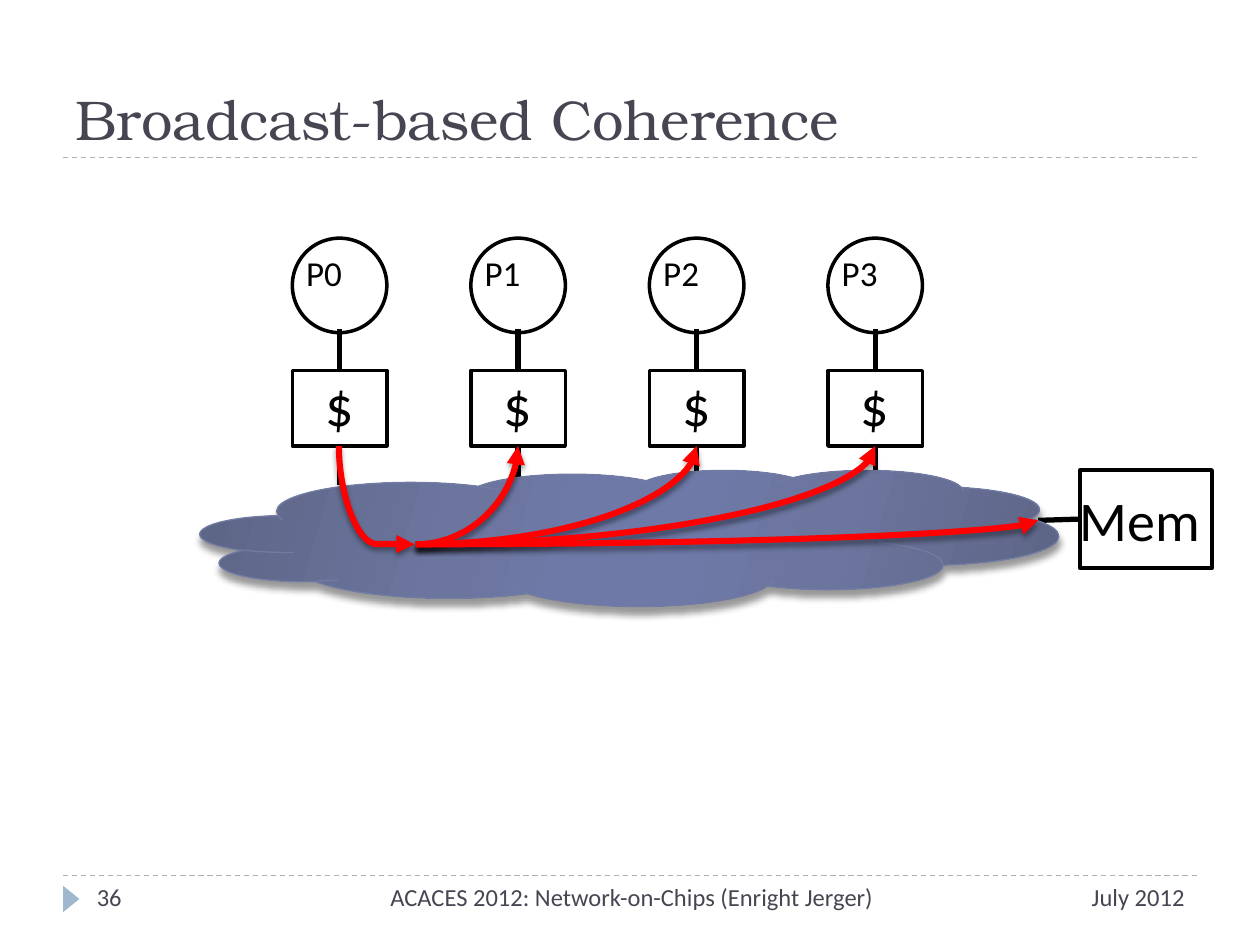
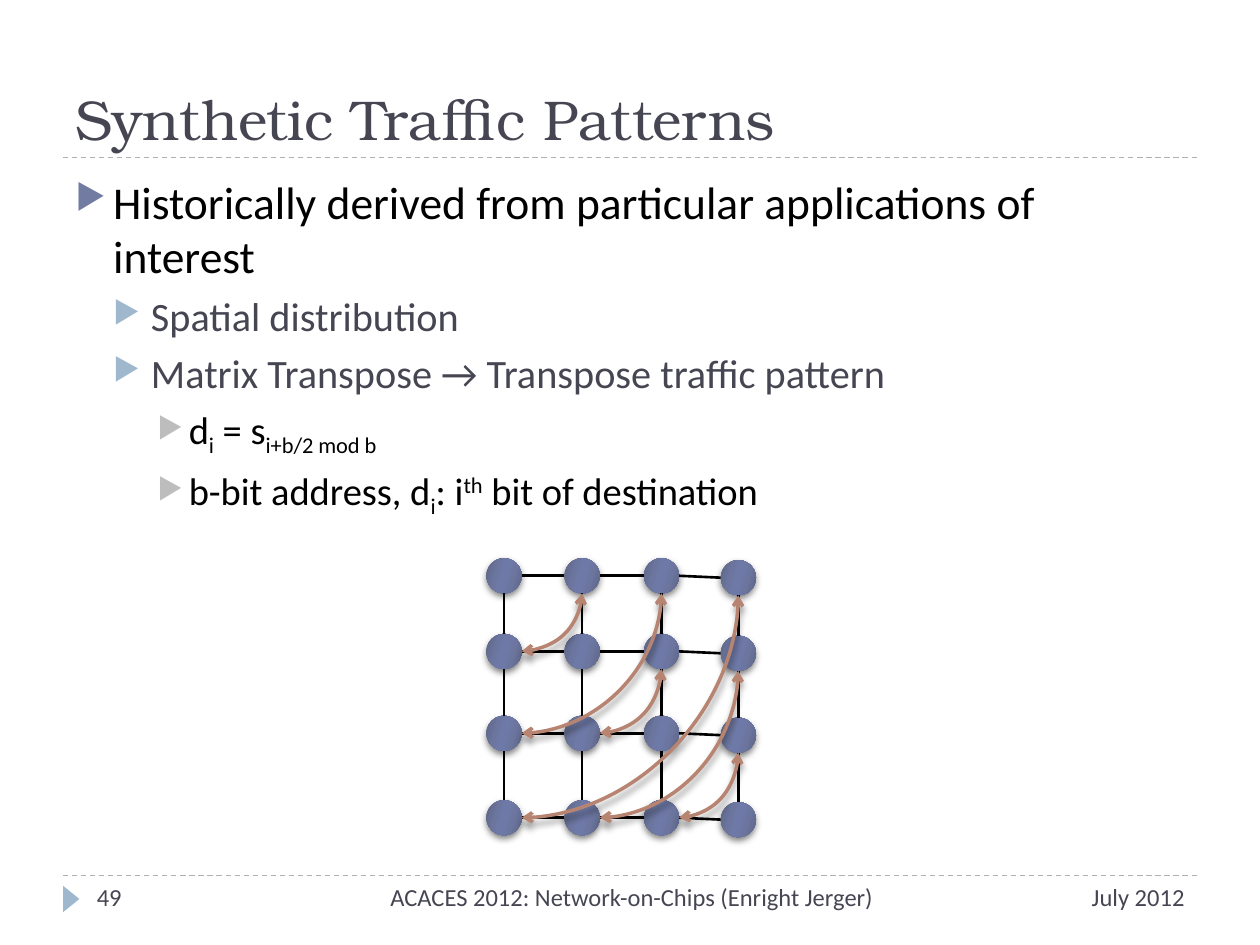
"""Build two lecture slides: broadcast-based coherence and synthetic traffic patterns."""
from itertools import combinations, product

from lxml.etree import SubElement
from pptx import Presentation
from pptx.dml.color import RGBColor
from pptx.enum.dml import MSO_LINE
from pptx.enum.shapes import MSO_CONNECTOR, MSO_SHAPE
from pptx.enum.text import MSO_ANCHOR, PP_ALIGN
from pptx.oxml.ns import qn
from pptx.util import Inches, Pt

COLORS = {"ink": "464653", "black": "000000", "rule": "B0B0B0", "sky": "9FB8CD",
          "indigo": "727CA3", "gray": "BDBDBD", "red": "FF0000", "clay": "B88472"}
GRADIENT = [(0, "5D6585"), (30, "6B759E"), (45, "6E79A7"),
            (55, "6E79A7"), (73, "6B759E"), (100, "5D6585")]
BODY_FONT, TITLE_FONT = "Calibri", "TeX Gyre Bonum"
FOOTER, DATE = "ACACES 2012: Network-on-Chips (Enright Jerger)", "July 2012"

PROCESSORS = ["P0", "P1", "P2", "P3"]
CACHE_LEFT, CACHE_STEP, CACHE_W = 2.32, 1.417, 0.75
HUB, CACHE_BOTTOM, MEM_PORT = (3.3, 4.32), 3.54, (8.24, 4.13)
RED_SHADOW, CLAY_SHADOW = (40, 3, 2), (40, 4, 3.4)
CLOUD_SHADOW, NODE_SHADOW = (40, 4, 3.4), (50, 4, 2)

LEVELS = [{"indent": 0.3, "hang": 0.3, "before": 6, "bullet": "indigo", "size": 26, "color": "black"},
          {"indent": 0.6, "hang": 0.3, "before": 5, "bullet": "sky", "size": 23, "color": "ink"},
          {"indent": 0.9, "hang": 0.25, "before": 5, "bullet": "gray", "size": 22, "color": "black"}]
SUB, SUPER = -25, 30
BULLETS = [
    (0, [("Historically derived from particular applications of interest", 0)]),
    (1, [("Spatial distribution", 0)]),
    (1, [("Matrix Transpose → Transpose traffic pattern", 0)]),
    (2, [("d", 0), ("i", SUB), (" = s", 0), ("i+b/2 mod b", SUB)]),
    (2, [("b-bit address, d", 0), ("i", SUB), (": i", 0), ("th", SUPER),
         (" bit of destination", 0)]),
]
NODE_COLUMNS, NODE_ROWS, NODE_R = [4.0, 4.62, 5.25, 5.86], [4.57, 5.17, 5.82, 6.49], 0.14


def rgb(name):
    return RGBColor.from_string(COLORS[name])


def style_run(r, size, color, font=BODY_FONT):
    r.font.size, r.font.name, r.font.color.rgb = Pt(size), font, rgb(color)


def write(s, text, size, color, font=BODY_FONT, align=PP_ALIGN.LEFT, anchor=MSO_ANCHOR.TOP):
    tf = s.text_frame
    tf.text, tf.word_wrap, tf.vertical_anchor = text, True, anchor
    p = tf.paragraphs[0]
    p.alignment = align
    style_run(p.runs[0], size, color, font)


def add_text(slide, box, *args, **kwargs):
    write(slide.shapes.add_textbox(*map(Inches, box)), *args, **kwargs)


def add_shape(slide, kind, box, fill=None, line=None, width=2.0):
    sp = slide.shapes.add_shape(kind, *map(Inches, box))
    sp.shadow.inherit = False
    if fill:
        sp.fill.solid()
        sp.fill.fore_color.rgb = rgb(fill)
    else:
        sp.fill.background()
    if line:
        sp.line.color.rgb, sp.line.width = rgb(line), Pt(width)
    else:
        sp.line.fill.background()
    return sp


def add_box(slide, kind, box, *args, **kwargs):
    sp = add_shape(slide, kind, box, line="black")
    tf = sp.text_frame
    tf.margin_left = tf.margin_right = tf.margin_top = tf.margin_bottom = 0
    write(sp, *args, **kwargs)
    return sp


def add_color(parent, value, tag="a:srgbClr"):
    return SubElement(parent, qn(tag), val=value)


def cast_shadow(effects, shadow):
    opacity, blur, dist = shadow
    outer = SubElement(effects, qn("a:outerShdw"), blurRad=str(Pt(blur)), dist=str(Pt(dist)),
                       dir="5400000", rotWithShape="0")
    SubElement(add_color(outer, COLORS["black"]), qn("a:alpha"), val=str(opacity * 1000))


def shade(sp, shadow):
    sp.fill.gradient()
    sp.fill.gradient_angle = 344
    spPr = sp._element.spPr
    stops = spPr.find(qn("a:gradFill")).find(qn("a:gsLst"))
    for stop in list(stops):
        stops.remove(stop)
    for pos, value in GRADIENT:
        add_color(SubElement(stops, qn("a:gs"), pos=str(pos * 1000)), value)
    cast_shadow(spPr.find(qn("a:effectLst")), shadow)


def add_line(slide, start, end, color="black", width=3.0, kind=MSO_CONNECTOR.STRAIGHT, shadow=None):
    s = slide.shapes.add_connector(kind, *map(Inches, (*start, *end)))
    s.line.color.rgb, s.line.width = rgb(color), Pt(width)
    effects = SubElement(s._element.spPr, qn("a:effectLst"))
    if shadow:
        cast_shadow(effects, shadow)
    return s


def add_curve(slide, start, end, color, width, shadow, tail, head=None, preset="curvedConnector2"):
    s = add_line(slide, start, end, color, width, MSO_CONNECTOR.CURVE, shadow)
    spPr = s._element.spPr
    spPr.find(qn("a:prstGeom")).set("prst", preset)
    for tag, arrow in (("a:headEnd", head), ("a:tailEnd", tail)):
        if arrow:
            SubElement(spPr.find(qn("a:ln")), qn(tag), type=arrow)
    return s


def add_frame(prs, title, number):
    slide = prs.slides.add_slide(prs.slide_layouts[6])
    for y in (6.95, 1.25):
        add_line(slide, (0.5, y), (9.5, y), "rule", 0.75).line.dash_style = MSO_LINE.DASH
    marker = add_shape(slide, MSO_SHAPE.ISOSCELES_TRIANGLE, (0.46, 7.07, 0.21, 0.13), "sky")
    marker.rotation = 90
    add_text(slide, (0.5, 0.17, 9, 1.08), title, 32, "ink", TITLE_FONT, anchor=MSO_ANCHOR.BOTTOM)
    for left, width, text, align in ((8.2, 1.3, DATE, PP_ALIGN.RIGHT),
                                     (2.08, 5.87, FOOTER, PP_ALIGN.CENTER),
                                     (0.67, 1.03, str(number), PP_ALIGN.LEFT)):
        add_text(slide, (left, 6.95, width, 0.4), text, 14, "ink", align=align)
    return slide


def add_coherence(prs):
    slide = add_frame(prs, "Broadcast-based Coherence", 36)
    ports = []
    for i, name in enumerate(PROCESSORS):
        left = CACHE_LEFT + i * CACHE_STEP
        x = left + CACHE_W / 2
        ports.append(x)
        add_box(slide, MSO_SHAPE.OVAL, (left, 1.89, CACHE_W, 0.75), name, 20, "black")
        cache = add_box(slide, MSO_SHAPE.RECTANGLE, (left, 2.94, CACHE_W, 0.6), "$", 32, "black",
                        align=PP_ALIGN.CENTER)
        add_line(slide, (x, 2.61), (x, 2.94)).end_connect(cache, 0)
        add_line(slide, (x, CACHE_BOTTOM), (x, 3.85)).begin_connect(cache, 2)
    mem = add_box(slide, MSO_SHAPE.RECTANGLE, (8.57, 3.73, 1.05, 0.78), "Mem", 32, "black",
                  anchor=MSO_ANCHOR.MIDDLE)
    add_line(slide, MEM_PORT, (8.57, 4.12)).end_connect(mem, 1)
    cloud = add_shape(slide, MSO_SHAPE.CLOUD, (1.59, 3.73, 6.81, 1.08), line="indigo", width=0.75)
    shade(cloud, CLOUD_SHADOW)

    red = ("red", 3.5, RED_SHADOW, "triangle")
    request = add_curve(slide, (3.38, 3.63), (2.6, 4.23), *red, preset="curvedConnector3")
    spPr = request._element.spPr
    spPr.find(qn("a:xfrm")).set("rot", "16200000")
    SubElement(spPr.find(qn("a:prstGeom")).find(qn("a:avLst")), qn("a:gd"),
               name="adj1", fmla="val 99700")
    for target in [(x, CACHE_BOTTOM) for x in ports[1:]] + [MEM_PORT]:
        add_curve(slide, HUB, target, *red)


def add_bullets(slide):
    tf = slide.shapes.add_textbox(*map(Inches, (0.5, 1.33, 9, 5.4))).text_frame
    tf.word_wrap = True
    for i, (level, parts) in enumerate(BULLETS):
        p = tf.add_paragraph() if i else tf.paragraphs[0]
        look = LEVELS[level]
        p.level, p.space_before = level, Pt(look["before"])
        pPr = p._p.get_or_add_pPr()
        pPr.set("marL", str(Inches(look["indent"])))
        pPr.set("indent", str(-Inches(look["hang"])))
        add_color(SubElement(pPr, qn("a:buClr")), COLORS[look["bullet"]])
        SubElement(pPr, qn("a:buSzPct"), val="76000")
        SubElement(pPr, qn("a:buChar"), char="▶")
        for text, baseline in parts:
            r = p.add_run()
            r.text = text
            style_run(r, look["size"], look["color"])
            if baseline:
                r.font._element.set("baseline", str(baseline * 1000))


def add_traffic(prs):
    slide = add_frame(prs, "Synthetic Traffic Patterns", 49)
    add_bullets(slide)
    size = len(NODE_ROWS)
    center = {(row, col): (NODE_COLUMNS[col], NODE_ROWS[row] + (0.015 if col == size - 1 else 0))
              for row, col in product(range(size), repeat=2)}
    for x, y in center.values():
        node = add_shape(slide, MSO_SHAPE.OVAL, (x - NODE_R, y - NODE_R, 2 * NODE_R, 2 * NODE_R))
        shade(node, NODE_SHADOW)
    for (row, col), (x, y) in center.items():
        if col + 1 < size:
            next_x, next_y = center[row, col + 1]
            add_line(slide, (x + NODE_R, y), (next_x - NODE_R, next_y), width=1.5)
        if row + 1 < size:
            below_x, below_y = center[row + 1, col]
            add_line(slide, (x, y + NODE_R), (below_x, below_y - NODE_R), width=1.5)
    for low, high in combinations(range(size), 2):
        x, y = center[high, low]
        mirror_x, mirror_y = center[low, high]
        add_curve(slide, (x + NODE_R, y), (mirror_x, mirror_y + NODE_R),
                  "clay", 2, CLAY_SHADOW, "arrow", "arrow")


def main():
    prs = Presentation()
    prs.slide_width, prs.slide_height = Inches(10), Inches(7.5)
    add_coherence(prs)
    add_traffic(prs)
    prs.save("out.pptx")


if __name__ == "__main__":
    main()
